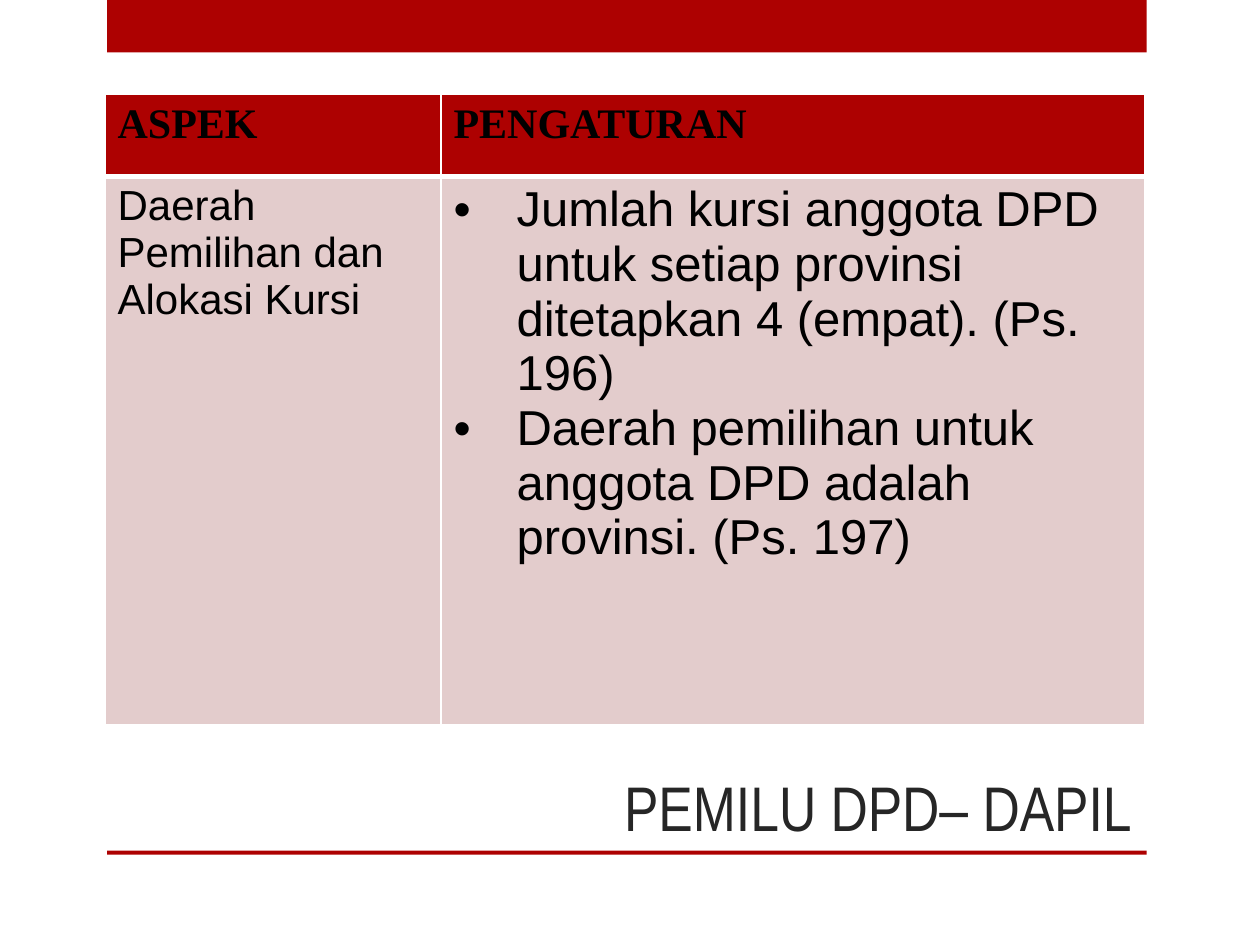
import pptx
import pptx.util
import pptx.dml.color
import pptx.enum.shapes
import pptx.enum.text
import pptx.oxml
import pptx.oxml.ns

COLORS = {"red": "AD0101", "pink": "E3CCCC", "white": "FFFFFF", "black": "000000", "title": "262626"}
ALIGN = pptx.enum.text.PP_ALIGN


def rgb(name):
    return pptx.dml.color.RGBColor.from_string(COLORS[name])


def element(xml):
    return pptx.oxml.parse_xml(xml.replace(" ", f" {pptx.oxml.ns.nsdecls('a')} ", 1))


class Deck:
    unit = pptx.util.Inches(1 / 12)
    columns, rows = 120, 90

    def __init__(self):
        self.prs = pptx.Presentation()
        self.prs.slide_width = self.grid(self.columns)
        self.prs.slide_height = self.grid(self.rows)
        self.s = self.prs.slides.add_slide(self.prs.slide_layouts[6])

    def grid(self, n):
        return round(n * self.unit)

    def box(self, *cells):
        return [self.grid(n) for n in cells]

    def format(self, p, font, size, color, bold=False):
        for r in p.runs:
            r.font.name, r.font.size, r.font.bold = font, pptx.util.Pt(size), bold
            r.font.color.rgb = rgb(color)

    def bar(self, *cells):
        sp = self.s.shapes.add_shape(pptx.enum.shapes.MSO_SHAPE.RECTANGLE, *self.box(*cells))
        sp.shadow.inherit = False
        sp.fill.solid()
        sp.fill.fore_color.rgb = rgb("red")
        sp.line.fill.background()

    def title(self, text, *cells):
        tf = self.s.shapes.add_textbox(*self.box(*cells)).text_frame
        tf.word_wrap = True
        tf.vertical_anchor = pptx.enum.text.MSO_ANCHOR.BOTTOM
        tf.text = text
        p = tf.paragraphs[0]
        p.alignment = ALIGN.RIGHT
        self.format(p, "Arial Narrow", 36, "title")

    def table(self, widths, heights, *cells):
        shape = self.s.shapes.add_table(len(heights), len(widths), *self.box(*cells))
        for column, width in zip(shape.table.columns, widths):
            column.width = self.grid(width)
        for row, height in zip(shape.table.rows, heights):
            row.height = self.grid(height)
        return shape.table

    def cell(self, cell, text, fill, font, size, bold=False, bullets=False, **borders):
        cell.text = text
        cell.fill.solid()
        cell.fill.fore_color.rgb = rgb(fill)
        for p in cell.text_frame.paragraphs:
            self.format(p, font, size, "black", bold)
            if bullets:
                self.bullet(p)
        self.borders(cell, **borders)

    def bullet(self, p):
        pPr = p._p.get_or_add_pPr()
        indent = pptx.util.Inches(0.5)
        pPr.set("marL", str(indent))
        pPr.set("indent", str(-indent))
        pPr.append(element('<a:buFont typeface="Arial"/>'))
        pPr.append(element('<a:buChar char="•"/>'))

    def borders(self, cell, top=1, bottom=1):
        tcPr = cell._tc.get_or_add_tcPr()
        for i, (side, width) in enumerate({"L": 1, "R": 1, "T": top, "B": bottom}.items()):
            tcPr.insert(i, element(
                f'<a:ln{side} w="{pptx.util.Pt(width)}"><a:solidFill>'
                f'<a:srgbClr val="{COLORS["white"]}"/></a:solidFill></a:ln{side}>'))


def main():
    d = Deck()
    d.bar(10.2, 0, 99, 5)
    d.bar(10.2, 81, 99, 0.4)
    d.title("PEMILU DPD– DAPIL", 10, 60, 99, 21)
    table = d.table([32, 67], [7.8, 52.2], 10, 9, 99, 60)
    for i, heading in enumerate(["ASPEK", "PENGATURAN"]):
        d.cell(table.cell(0, i), heading, "red", "Times New Roman", 24, bold=True, bottom=3)
    d.cell(table.cell(1, 0), "Daerah Pemilihan dan Alokasi Kursi", "pink", "Arial", 24, top=3)
    rules = [
        "Jumlah kursi anggota DPD untuk setiap provinsi ditetapkan 4 (empat). (Ps. 196)",
        "Daerah pemilihan untuk anggota DPD adalah provinsi. (Ps. 197)",
    ]
    d.cell(table.cell(1, 1), "\n".join(rules), "pink", "Arial", 28, bullets=True, top=3)
    d.prs.save("out.pptx")


if __name__ == "__main__":
    main()
